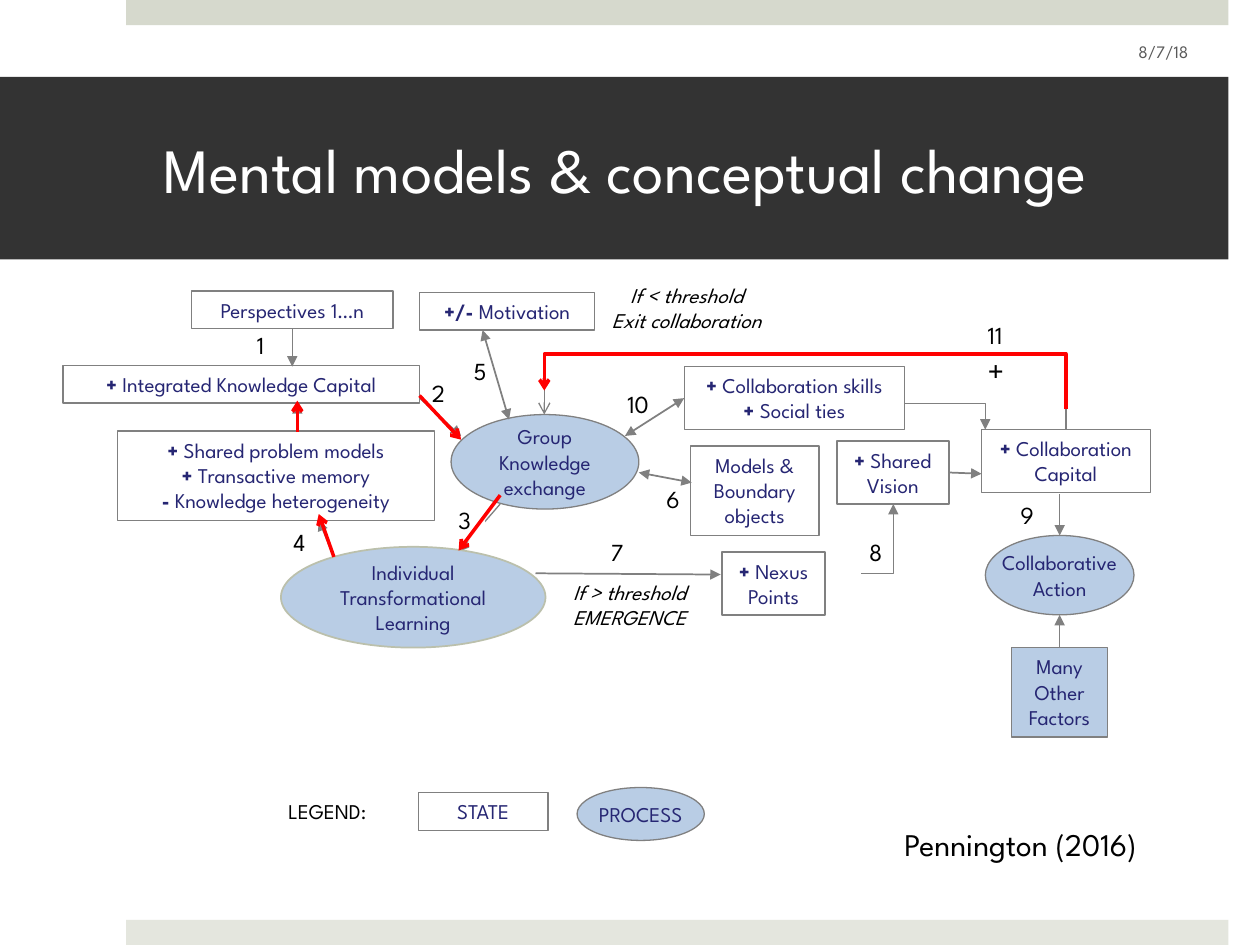
from dataclasses import dataclass

from lxml import etree
from pptx import Presentation
from pptx import util as u
from pptx.dml.color import RGBColor
from pptx.enum import shapes, text
from pptx.oxml.ns import qn

IN = u.Inches
RECT, OVAL = shapes.MSO_SHAPE.RECTANGLE, shapes.MSO_SHAPE.OVAL
LEFT, CENTER, RIGHT = text.PP_ALIGN.LEFT, text.PP_ALIGN.CENTER, text.PP_ALIGN.RIGHT
TOP, MIDDLE = text.MSO_ANCHOR.TOP, text.MSO_ANCHOR.MIDDLE
SIDE_TOP, SIDE_LEFT, SIDE_BOTTOM, SIDE_RIGHT = range(4)


@dataclass(frozen=True)
class Theme:
    font: str = "League Spartan"
    title: int = 36
    large: int = 18
    number: int = 14
    body: int = 12
    small: int = 10
    black: str = "000000"
    white: str = "FFFFFF"
    band: str = "333333"
    top_strip: str = "D6D9CD"
    bottom_strip: str = "E4E6DE"
    date: str = "595959"
    navy: str = "262673"
    process: str = "B9CDE5"
    sage: str = "BBC0AC"
    gray: str = "808080"
    red: str = "FF0000"


THEME = Theme()
SIGNS = ("+", "-", "+/-")

# State boxes: name -> (left, top, width, height), text lines, line width
STATES = {
    "perspectives": ((1.52, 2.31, 1.6, 0.3), ["Perspectives 1…n"], 0.75),
    "integrated": ((0.5, 2.9, 2.83, 0.3), ["+ Integrated Knowledge Capital"], 0.75),
    "motivation": ((3.33, 2.32, 1.39, 0.3), ["+/- Motivation"], 0.75),
    "shared models": ((0.93, 3.42, 2.52, 0.71), ["+ Shared problem models", "+ Transactive memory",
                                                 "- Knowledge heterogeneity"], 0.75),
    "skills": ((5.43, 2.91, 1.75, 0.5), ["+ Collaboration skills", "+ Social ties"], 0.75),
    "boundary": ((5.48, 3.54, 1.02, 0.71), ["Models & Boundary objects"], 0.75),
    "vision": ((6.64, 3.5, 0.89, 0.5), ["+ Shared", "Vision"], 1),
    "nexus": ((5.73, 4.38, 0.82, 0.5), ["+ Nexus", "Points"], 1),
    "capital": ((7.79, 3.41, 1.34, 0.5), ["+ Collaboration", "Capital"], 0.75),
    "legend state": ((3.32, 6.29, 1.03, 0.3), ["STATE"], 0.75),
}
PROCESSES = [
    ((3.58, 3.29, 1.49, 0.75), ["Group", "Knowledge", "exchange"]),
    ((7.82, 4.25, 1.18, 0.63), ["Collaborative", "Action"]),
    ((4.58, 6.25, 1.01, 0.42), ["PROCESS"]),
]
# Gray arrows: start, end, line width, two-headed
ARROWS = [
    ((3.33, 3.16), (3.66, 3.46), 0.75, False),
    ((8.41, 3.92), (8.41, 4.25), 0.75, False),
    ((3.83, 2.62), (4.04, 3.33), 1, True),
    ((4.25, 4.55), (5.72, 4.56), 1, False),
    ((5.07, 3.75), (5.49, 3.83), 1, True),
    ((3.97, 4), (3.64, 4.38), 0.75, False),
    ((2.65, 4.42), (2.53, 4.13), 0.75, False),
    ((2.36, 3.41), (2.36, 3.2), 0.75, False),
]
FEEDBACK_ARROWS = [
    ((3.97, 3.93), (3.64, 4.37)),
    ((2.65, 4.42), (2.53, 4.08)),
    ((2.36, 3.43), (2.36, 3.18)),
    ((3.33, 3.14), (3.66, 3.49)),
]
STEP_NUMBERS = {
    "1": (1.94, 2.57), "2": (3.33, 2.95), "4": (2.23, 4.13), "5": (3.66, 2.78),
    "6": (5.19, 3.79), "7": (4.75, 4.21), "8": (6.8, 4.21), "9": (8, 3.92),
    "10": (4.88, 3.04), "11": (7.74, 2.49),
}


def color(value):
    return RGBColor.from_string(value)


def write(shape, lines, size, ink, align=LEFT, anchor=TOP, wrap=True, italic=False):
    """Put one paragraph per line; a leading sign is bold."""
    frame = shape.text_frame
    frame.word_wrap = wrap
    frame.vertical_anchor = anchor
    for index, line in enumerate(lines):
        para = frame.paragraphs[0] if index == 0 else frame.add_paragraph()
        para.alignment = align
        font = para.font
        font.name, font.size, font.italic = THEME.font, u.Pt(size), italic
        font.color.rgb = color(ink)
        sign, gap, rest = line.partition(" ")
        if gap and sign in SIGNS:
            span = para.add_run()
            span.text, span.font.bold = sign, True
            line = gap + rest
        para.add_run().text = line


def add_box(page, area, kind=RECT, fill=None, line=None, width=0.75):
    box = page.shapes.add_shape(kind, *map(IN, area))
    box.shadow.inherit = False
    if fill:
        box.fill.solid()
        box.fill.fore_color.rgb = color(fill)
    else:
        box.fill.background()
    if line:
        box.line.color.rgb = color(line)
        box.line.width = u.Pt(width)
    else:
        box.line.fill.background()
    return box


def add_process(page, area, lines, line=THEME.gray, width=0.75, wrap=False):
    box = add_box(page, area, OVAL, THEME.process, line, width)
    write(box, lines, THEME.body, THEME.navy, CENTER, MIDDLE, wrap)


def add_state(page, area, lines, width=0.75, fill=None):
    box = add_box(page, area, fill=fill, line=THEME.gray, width=width)
    write(box, lines, THEME.body, THEME.navy, CENTER)
    return box


def add_label(page, area, lines, size, fill=None, **style):
    label = page.shapes.add_textbox(*map(IN, area))
    write(label, lines, size, THEME.black, wrap=False, **style)
    label.text_frame.auto_size = text.MSO_AUTO_SIZE.SHAPE_TO_FIT_TEXT
    if fill:
        label.fill.solid()
        label.fill.fore_color.rgb = color(fill)


def style_line(shape, ink, width, head=None, tail=None):
    shape.line.color.rgb = color(ink)
    shape.line.width = u.Pt(width)
    outline = shape.line._get_or_add_ln()
    for tag, kind in (("a:headEnd", head), ("a:tailEnd", tail)):
        if kind:
            etree.SubElement(outline, qn(tag), type=kind)


def add_arrow(page, start, end, ink=THEME.gray, width=0.75, both=False, tip="triangle",
              kind=shapes.MSO_CONNECTOR.STRAIGHT):
    arrow = page.shapes.add_connector(kind, *map(IN, (*start, *end)))
    style_line(arrow, ink, width, tip if both else None, tip)
    etree.SubElement(arrow._element.spPr, qn("a:effectLst"))
    return arrow


def add_loop(page, start, end, bend_y, ink, width):
    """Elbow that rises from start to bend_y, runs across and drops to end."""
    (x1, y1), (x2, y2) = start, end
    rise, run = y1 - y2, x1 - x2
    mid_x, mid_y = (x1 + x2) / 2, (y1 + y2) / 2
    # The elbow is laid out upright, then turned by 270 degrees
    loop = add_arrow(page, (mid_x - rise / 2, mid_y + run / 2), (mid_x + rise / 2, mid_y - run / 2),
                     ink, width, tip="arrow", kind=shapes.MSO_CONNECTOR.ELBOW)
    properties = loop._element.spPr
    properties.find(qn("a:xfrm")).set("rot", str(270 * 60000))
    guides = properties.find(qn("a:prstGeom")).get_or_add_avLst()
    bend = round((y1 - bend_y) / rise * 100000)
    etree.SubElement(guides, qn("a:gd"), name="adj1", fmla=f"val {bend}")


def add_corner(page, points, **ends):
    scaled = [(IN(x), IN(y)) for x, y in points]
    builder = page.shapes.build_freeform(*scaled[0])
    builder.add_line_segments(scaled[1:], close=False)
    corner = builder.convert_to_shape()
    corner.shadow.inherit = False
    corner.fill.background()
    style_line(corner, THEME.gray, 0.75, **ends)


def add_frame(page):
    for top, fill in ((0, THEME.top_strip), (7.3, THEME.bottom_strip)):
        add_box(page, (1, top, 8.75, 0.2), fill=fill)
    title = add_box(page, (0, 0.61, 9.75, 1.45), fill=THEME.band)
    write(title, ["Mental models & conceptual change"], THEME.title, THEME.white, anchor=MIDDLE)
    title.text_frame.margin_left, title.text_frame.margin_right = IN(1.3), IN(0.3)
    date = page.shapes.add_textbox(*map(IN, (7.2, 0.21, 2.33, 0.4)))
    write(date, ["8/7/18"], THEME.small, THEME.date, RIGHT, MIDDLE)


def main():
    deck = Presentation()
    deck.slide_width, deck.slide_height = IN(10), IN(7.5)
    page = deck.slides.add_slide(deck.slide_layouts[6])
    add_frame(page)

    # States and processes
    states = {name: add_state(page, *details) for name, details in STATES.items()}
    factors = add_state(page, (8.03, 5.14, 0.76, 0.71), ["Many", "Other", "Factors"], fill=THEME.process)
    for area, lines in PROCESSES:
        add_process(page, area, lines)

    # Gray flow
    for start, end, width, both in ARROWS:
        add_arrow(page, start, end, width=width, both=both)
    add_arrow(page, (2.32, 2.61), (2.32, 2.91)).begin_connect(states["perspectives"], SIDE_BOTTOM)
    add_arrow(page, (8.41, 5.14), (8.41, 4.88)).begin_connect(factors, SIDE_TOP)
    add_arrow(page, (7.53, 3.75), (7.79, 3.76), width=1).begin_connect(states["vision"], SIDE_RIGHT)
    add_arrow(page, (4.96, 3.46), (5.43, 3.16), width=1, both=True).end_connect(states["skills"], SIDE_LEFT)
    add_corner(page, [(7.18, 3.2), (7.82, 3.2), (7.82, 3.41)], tail="triangle")
    add_corner(page, [(7.09, 4), (7.09, 4.55), (6.83, 4.55)], head="triangle")
    add_loop(page, (8.46, 3.41), (4.32, 3.29), 2.8, THEME.gray, 0.75)
    add_process(page, (2.23, 4.34, 2.1, 0.8), ["Individual", "Transformational Learning"],
                THEME.sage, 1, wrap=True)

    # Labels
    for number, (left, top) in STEP_NUMBERS.items():
        add_label(page, (left, top, 0.2 + 0.11 * len(number), 0.34), [number], THEME.number)
    add_label(page, (3.54, 3.96, 0.31, 0.34), ["3"], THEME.number, fill=THEME.white)
    add_label(page, (7.74, 2.74, 0.35, 0.4), ["+"], THEME.large)
    add_label(page, (4.71, 2.19, 1.48, 0.5), ["If < threshold", "Exit collaboration"], THEME.body,
              align=CENTER, italic=True)
    add_label(page, (4.45, 4.55, 1.29, 0.5), ["If > threshold", "EMERGENCE"], THEME.body, italic=True)
    add_label(page, (2.19, 6.29, 0.94, 0.3), ["LEGEND:"], THEME.body)
    add_label(page, (7.08, 6.5, 2.42, 0.4), ["Pennington (2016)"], THEME.large)

    # Red feedback loop
    add_loop(page, (8.46, 3.25), (4.32, 3.1), 2.81, THEME.red, 2)
    for start, end in FEEDBACK_ARROWS:
        add_arrow(page, start, end, THEME.red, 2, tip="arrow")

    deck.save("out.pptx")


if __name__ == "__main__":
    main()
